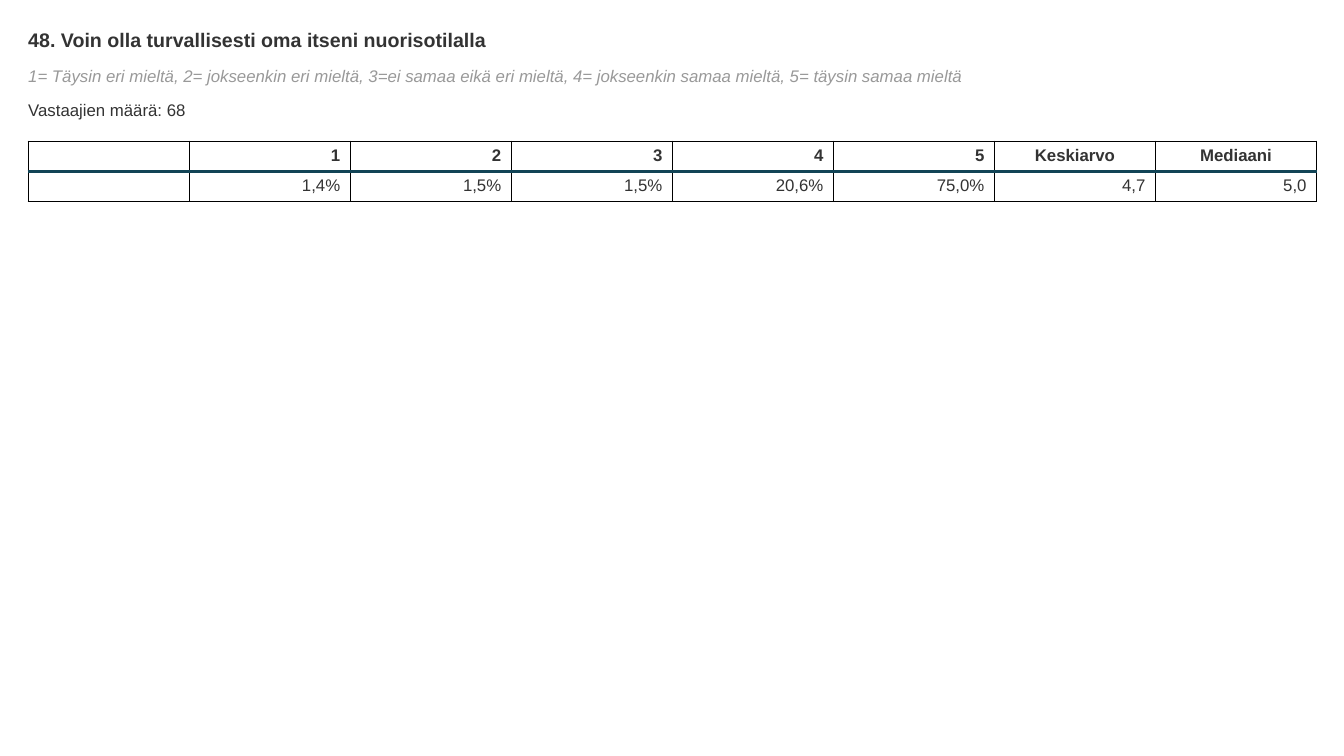
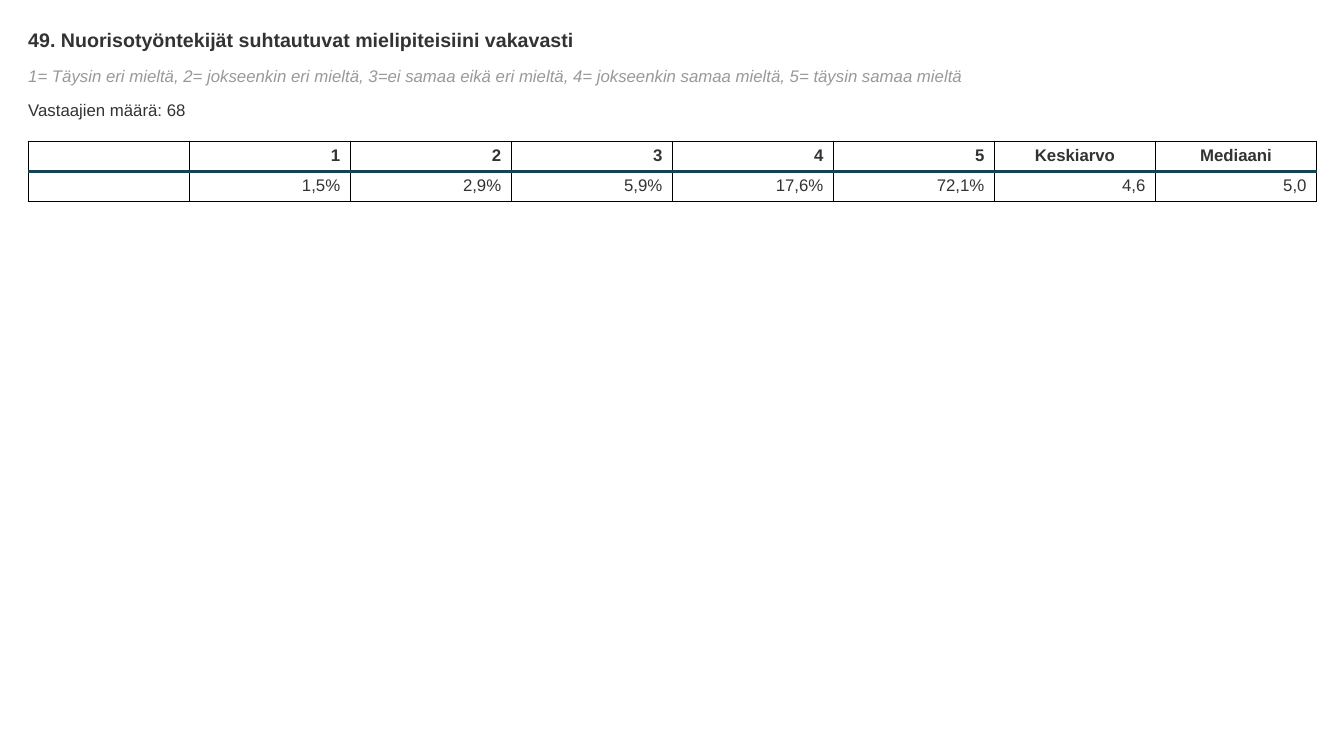
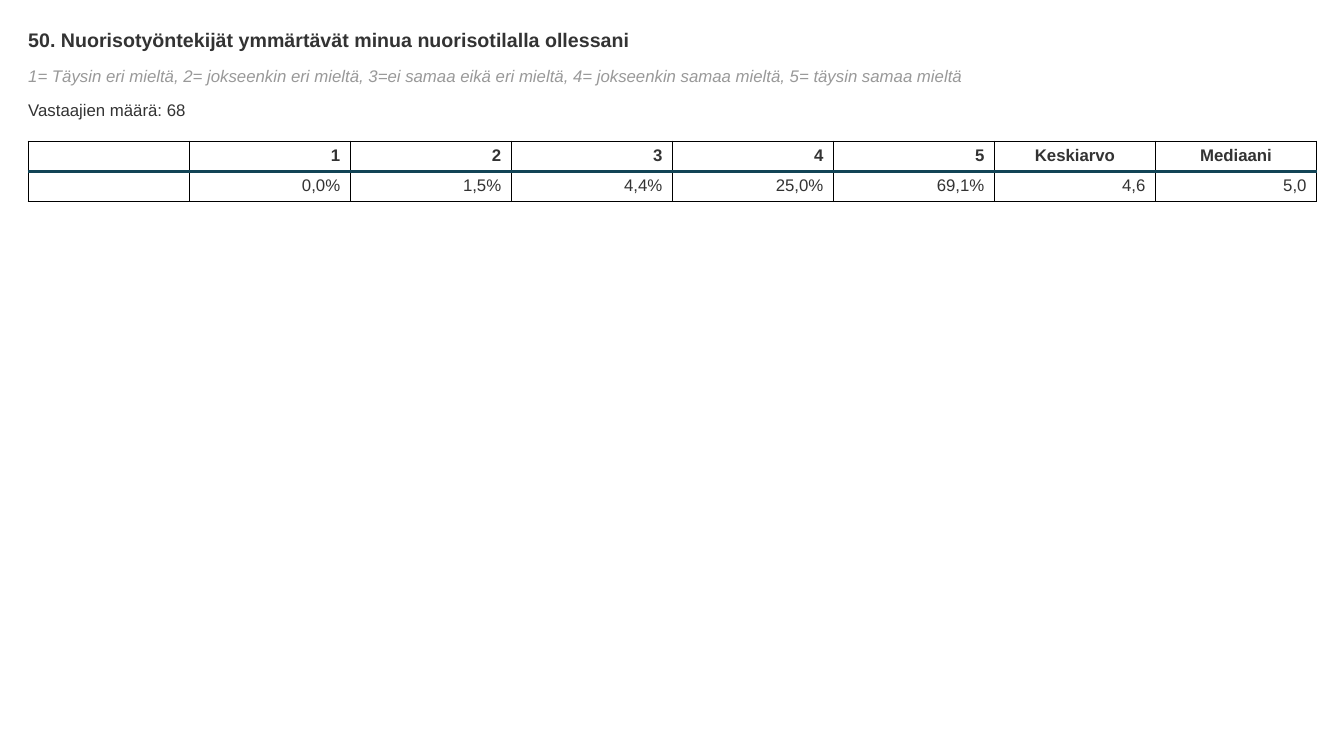
from lxml import etree
from pptx import Presentation
from pptx.dml.color import RGBColor
from pptx.enum.text import MSO_AUTO_SIZE, PP_ALIGN
from pptx.oxml.ns import qn
from pptx.util import Pt

PX = 9144
WIDE, HIGH = 1333, 750
LEFT, SPAN = 28, 1278
TOP, ROW = 140, 30

INK = RGBColor(0x33, 0x33, 0x33)
GREY = RGBColor(0x99, 0x99, 0x99)
TEAL = RGBColor(0x12, 0x44, 0x56)
BLACK = RGBColor(0, 0, 0)

FONT = "Arial"
BODY = 12
RIGHT, CENTER = PP_ALIGN.RIGHT, PP_ALIGN.CENTER
FIT = MSO_AUTO_SIZE.SHAPE_TO_FIT_TEXT

SCALE = ("1= Täysin eri mieltä, 2= jokseenkin eri mieltä, "
         "3=ei samaa eikä eri mieltä, 4= jokseenkin samaa mieltä, "
         "5= täysin samaa mieltä")
COUNT = "Vastaajien määrä: 68"
HEAD = ["", "1", "2", "3", "4", "5", "Keskiarvo", "Mediaani"]
ITEMS = [
    ("48. Voin olla turvallisesti oma itseni nuorisotilalla",
     ["", "1,4%", "1,5%", "1,5%", "20,6%", "75,0%", "4,7", "5,0"]),
    ("49. Nuorisotyöntekijät suhtautuvat mielipiteisiini vakavasti",
     ["", "1,5%", "2,9%", "5,9%", "17,6%", "72,1%", "4,6", "5,0"]),
    ("50. Nuorisotyöntekijät ymmärtävät minua nuorisotilalla ollessani",
     ["", "0,0%", "1,5%", "4,4%", "25,0%", "69,1%", "4,6", "5,0"]),
]


def add_run(para, text, size=BODY, color=INK, bold=False, italic=False):
    run = para.add_run()
    run.text = text
    font = run.font
    font.name, font.size = FONT, Pt(size)
    font.bold, font.italic = bold, italic
    font.color.rgb = color


def add_line(slide, top, high, text, **style):
    box = slide.shapes.add_textbox(LEFT * PX, top * PX, SPAN * PX, high * PX)
    frame = box.text_frame
    frame.word_wrap = True
    frame.auto_size = FIT
    frame.margin_left = frame.margin_right = 0
    frame.margin_top = frame.margin_bottom = 0
    add_run(frame.paragraphs[0], text, **style)


def add_edge(cell, side, color, width):
    props = cell._tc.get_or_add_tcPr()
    edge = etree.SubElement(props, qn("a:" + side), w=str(Pt(width)))
    fill = etree.SubElement(edge, qn("a:solidFill"))
    etree.SubElement(fill, qn("a:srgbClr"), val=str(color))


def fill_cell(cell, text, align, bold, rule):
    para = cell.text_frame.paragraphs[0]
    if text:
        para.alignment = align
        add_run(para, text, bold=bold)
    else:
        etree.SubElement(para._p, qn("a:endParaRPr"), sz=str(BODY * 100))
    for side in ("lnL", "lnR", "lnT", "lnB"):
        if side == rule:
            add_edge(cell, side, TEAL, 2)
        else:
            add_edge(cell, side, BLACK, 1)
    cell.fill.background()


def add_grid(slide, data):
    cols = len(HEAD)
    grid = slide.shapes.add_table(
        2, cols, LEFT * PX, TOP * PX, SPAN * PX, 2 * ROW * PX).table
    grid.first_row = grid.horz_banding = False
    for col in grid.columns:
        col.width = SPAN * PX // cols
    for i, (name, value) in enumerate(zip(HEAD, data)):
        align = RIGHT if len(name) < 2 else CENTER
        fill_cell(grid.cell(0, i), name, align, True, "lnB")
        fill_cell(grid.cell(1, i), value, RIGHT, False, "lnT")


def add_page(deck, title, data):
    slide = deck.slides.add_slide(deck.slide_layouts[6])
    add_line(slide, 28, 23, title, size=14, bold=True)
    add_line(slide, 65, 20, SCALE, color=GREY, italic=True)
    add_line(slide, 99, 20, COUNT)
    add_grid(slide, data)


def main():
    deck = Presentation()
    deck.slide_width, deck.slide_height = WIDE * PX, HIGH * PX
    for title, data in ITEMS:
        add_page(deck, title, data)
    deck.save("out.pptx")


if __name__ == "__main__":
    main()
